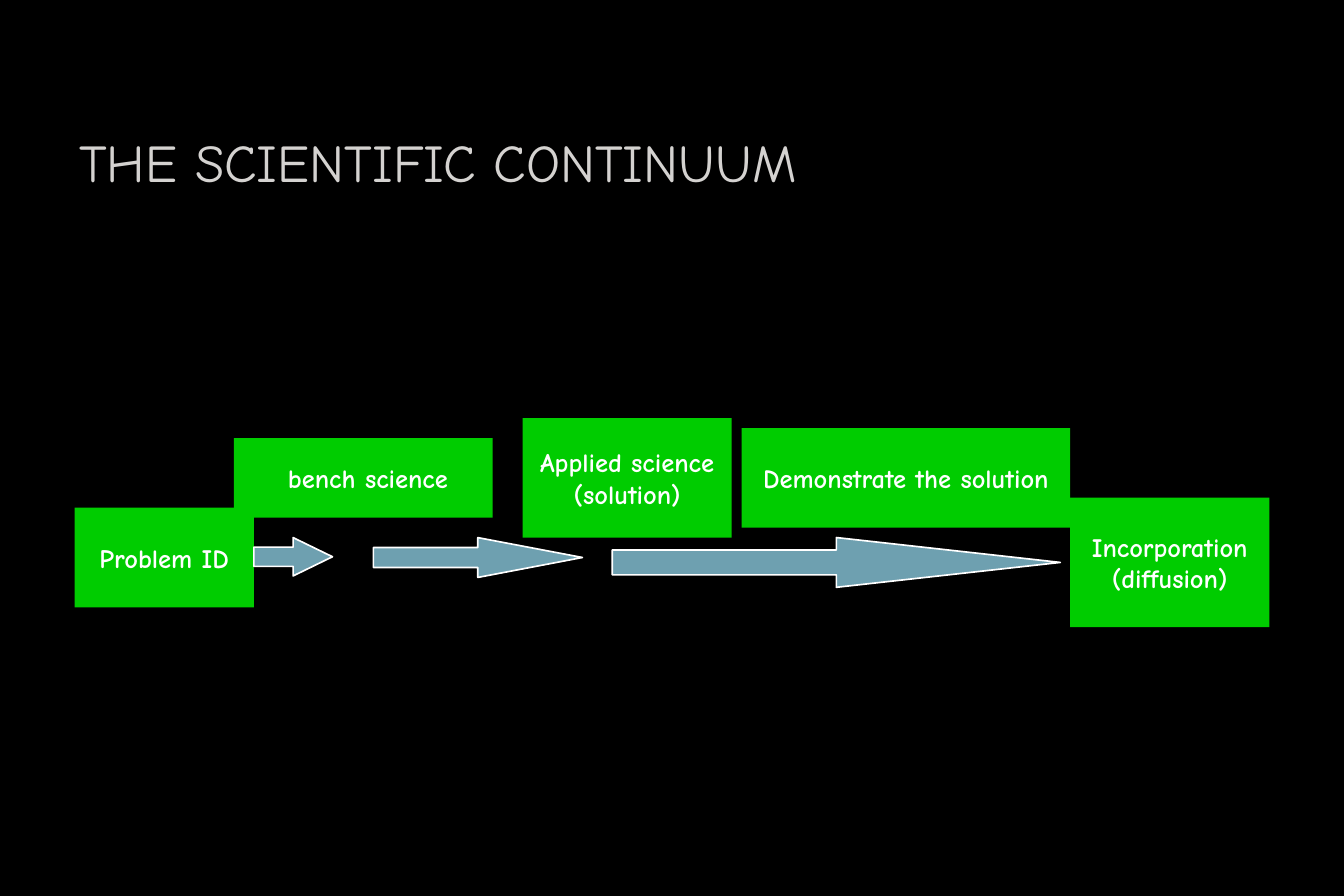
from pptx import Presentation
from pptx.dml.color import RGBColor
from pptx.enum.shapes import MSO_SHAPE
from pptx.enum.text import MSO_ANCHOR, MSO_AUTO_SIZE, PP_ALIGN
from pptx.util import Inches, Pt

COLORS = {"background": "000000", "stage": "00CC00", "arrow": "6EA0B0",
          "white": "FFFFFF", "title": "D4D2D0"}
UNIT = Inches(1) / 12  # one grid step; the slide is 135 columns by 90 rows
TITLE_FORMAT = {"name": "Comic Neue", "size": Pt(32), "bold": False}
STAGE_FORMAT = {"name": "Comic Neue", "size": Pt(16), "bold": True}

# Text lines, then column, row, columns wide, rows high
STAGES = [
    (["Problem ID"], (7.5, 51, 18, 10)),
    ([" bench science"], (23.5, 44, 26, 8)),
    (["Applied science", "(solution)"], (52.5, 42, 21, 12)),
    (["Demonstrate the solution"], (74.5, 43, 33, 10)),
    (["Incorporation", "(diffusion)"], (107.5, 50, 20, 13)),
]
ARROWS = [(25.5, 54, 7.9, 3.85), (37.5, 54, 21, 4), (61.5, 54, 45, 5)]


def color(name):
    return RGBColor.from_string(COLORS[name])


def on_grid(cells):
    return [round(cell * UNIT) for cell in cells]


def write(text_frame, lines, font_format, color_name, alignment):
    for index, line in enumerate(lines):
        paragraph = text_frame.add_paragraph() if index else text_frame.paragraphs[0]
        paragraph.alignment = alignment
        run = paragraph.add_run()
        run.text = line
        for attribute, value in font_format.items():
            setattr(run.font, attribute, value)
        run.font.color.rgb = color(color_name)


def add_filled_shape(slide, kind, cells, fill_name):
    shape = slide.shapes.add_shape(kind, *on_grid(cells))
    shape.shadow.inherit = False
    shape.fill.solid()
    shape.fill.fore_color.rgb = color(fill_name)
    return shape


def add_stage(slide, lines, cells):
    shape = add_filled_shape(slide, MSO_SHAPE.RECTANGLE, cells, "stage")
    shape.line.fill.background()
    shape.text_frame.word_wrap = False
    shape.text_frame.vertical_anchor = MSO_ANCHOR.MIDDLE
    write(shape.text_frame, lines, STAGE_FORMAT, "white", PP_ALIGN.CENTER)


def add_arrow(slide, cells):
    shape = add_filled_shape(slide, MSO_SHAPE.RIGHT_ARROW, cells, "arrow")
    shape.line.color.rgb = color("white")
    shape.line.width = Pt(1)
    # The head takes half of the arrow's length
    shape.adjustments[0] = 0.5
    shape.adjustments[1] = cells[2] / cells[3] / 2


def format_title(slide, text):
    title = slide.shapes.title
    title.left, title.top, title.width, title.height = on_grid((6.75, 3.6, 121.5, 16.4))
    frame = title.text_frame
    frame.auto_size = MSO_AUTO_SIZE.NONE
    frame.vertical_anchor = MSO_ANCHOR.BOTTOM
    write(frame, [text], TITLE_FORMAT, "title", PP_ALIGN.LEFT)


def main():
    presentation = Presentation()
    presentation.slide_width = Inches(11.25)
    presentation.slide_height = Inches(7.5)
    slide = presentation.slides.add_slide(presentation.slide_layouts[5])
    slide.background.fill.solid()
    slide.background.fill.fore_color.rgb = color("background")

    format_title(slide, "THE SCIENTIFIC CONTINUUM")

    # Stages of the continuum
    for lines, cells in STAGES:
        add_stage(slide, lines, cells)

    # Arrows leading from one stage to the next
    for cells in ARROWS:
        add_arrow(slide, cells)

    presentation.save("out.pptx")


main()
